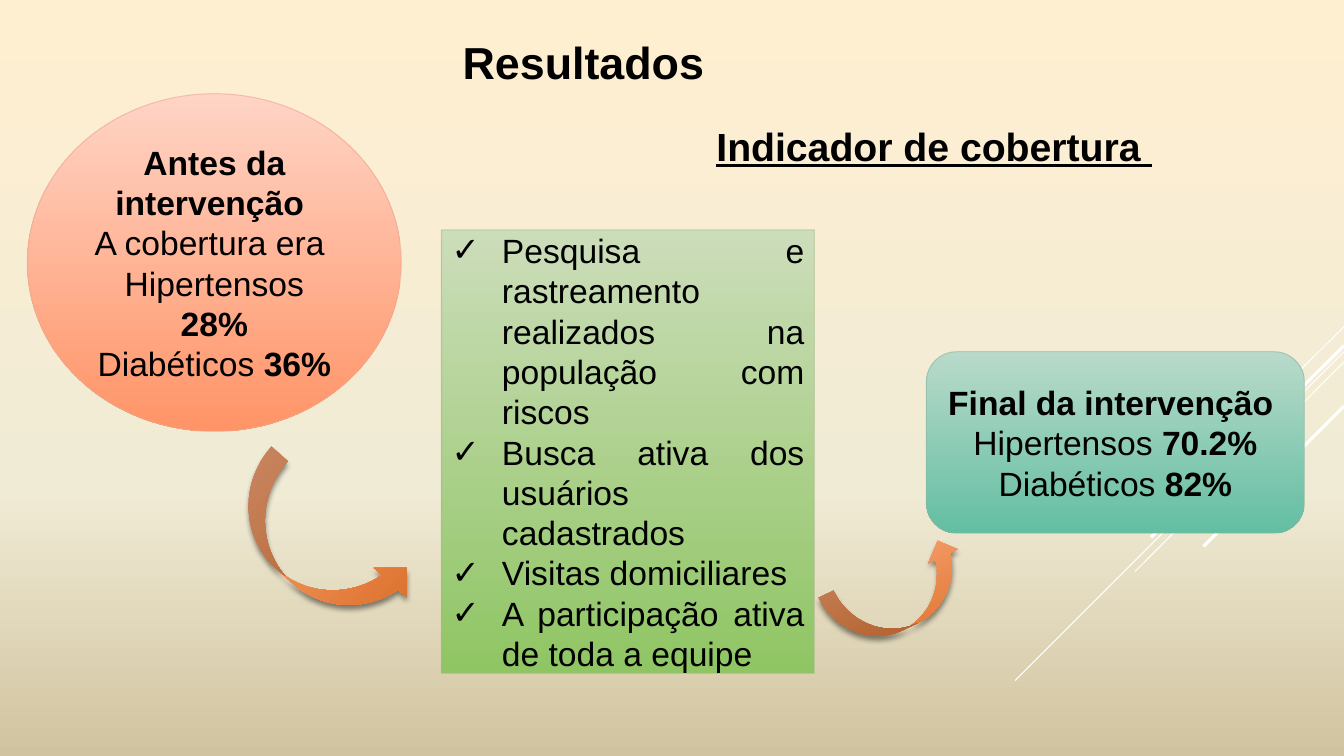
from copy import deepcopy

from lxml import etree
from pptx import Presentation
from pptx import util as u
from pptx.dml import color
from pptx.enum import shapes, text
from pptx.oxml import ns

KIND = shapes.MSO_SHAPE
ALIGN = text.PP_ALIGN


def tint(value):
    return color.RGBColor.from_string(value)


def node(base, tag, **attrs):
    return etree.SubElement(base, ns.qn(tag), attrs)


class Deck:
    font = "Arial"
    ink = "000000"

    def __init__(self):
        self.prs = Presentation()
        self.prs.slide_width = u.Inches(13.33)
        self.prs.slide_height = u.Inches(7.5)
        self.slide = self.prs.slides.add_slide(self.prs.slide_layouts[1])

    def box(self, x, y, w, h):
        wide, high = self.prs.slide_width, self.prs.slide_height
        return [round(part * full / 100) for part, full in
                ((x, wide), (y, high), (w, wide), (h, high))]

    def place(self, item, area):
        item.left, item.top, item.width, item.height = self.box(*area)

    def grade(self, fill, base, stops):
        fill.gradient()
        fill.gradient_angle = 270
        marks = base.find(".//" + ns.qn("a:gsLst"))
        while len(marks) < len(stops):
            marks.append(deepcopy(marks[-1]))
        for stop, (spot, tone) in zip(fill.gradient_stops, stops):
            stop.position = spot
            stop.color.rgb = tint(tone)

    def back(self, *stops):
        self.grade(self.slide.background.fill, self.slide.element, stops)

    def paint(self, item, top, low, edge=None):
        self.grade(item.fill, item.element.spPr, [(0, top), (1, low)])
        if edge is None:
            item.line.fill.background()
            return
        item.line.color.rgb = tint(edge)
        item.line.width = u.Pt(0.75)
        line = item.element.spPr.find(ns.qn("a:ln"))
        node(line.find(".//" + ns.qn("a:srgbClr")), "a:alpha", val="60000")

    def words(self, item, rows, size, align, anchor=text.MSO_ANCHOR.MIDDLE):
        frame = item.text_frame
        frame.word_wrap = True
        frame.auto_size = text.MSO_AUTO_SIZE.NONE
        frame.vertical_anchor = anchor
        for i, row in enumerate(rows):
            para = frame.add_paragraph() if i else frame.paragraphs[0]
            para.alignment = align
            para.line_spacing = 1
            para.space_before = para.space_after = u.Pt(0)
            para.font.name = self.font
            para.font.size = u.Pt(size)
            para.font.color.rgb = tint(self.ink)
            same = len({bold for _, bold in row}) == 1
            if same:
                para.font.bold = row[0][1]
            for part, bold in row:
                run = para.add_run()
                run.text = part
                if not same:
                    run.font.bold = bold
        return frame.paragraphs

    def title(self, line, area):
        item = self.slide.shapes.title
        self.place(item, area)
        for para in self.words(item, [[(line, True)]], 28, ALIGN.CENTER):
            para.font.underline = True

    def label(self, line, area):
        item = self.slide.shapes.add_textbox(*self.box(*area))
        self.words(item, [[(line, True)]], 32, ALIGN.LEFT,
                   text.MSO_ANCHOR.TOP)

    def checks(self, lines, area, *tones):
        item = self.slide.placeholders[1]
        self.place(item, area)
        self.paint(item, *tones)
        rows = [[(line, False)] for line in lines]
        for para in self.words(item, rows, 24, ALIGN.JUSTIFY):
            props = para._p.get_or_add_pPr()
            props.set("marL", str(u.Inches(0.5)))
            props.set("indent", str(-u.Inches(0.5)))
            last = props.find(ns.qn("a:defRPr"))
            last.addprevious(node(props, "a:buFont", typeface=self.font))
            last.addprevious(node(props, "a:buChar", char="✓"))

    def shape(self, kind, area, *tones):
        item = self.slide.shapes.add_shape(kind, *self.box(*area))
        item.shadow.inherit = False
        self.paint(item, *tones)
        return item

    def card(self, kind, rows, area, *tones):
        self.words(self.shape(kind, area, *tones), rows, 24, ALIGN.CENTER)

    def arrow(self, kind, area, turn):
        item = self.shape(kind, area, "FFAE82", "D7681F")
        item.rotation = turn
        fx = item.element.spPr.find(ns.qn("a:effectLst"))
        cast = node(fx, "a:outerShdw", blurRad=str(u.Pt(4)),
                    dist=str(u.Pt(3)), dir="5400000", rotWithShape="0")
        shade = node(cast, "a:srgbClr", val=self.ink)
        node(shade, "a:alpha", val="46000")

    def ray(self, start, x, y, width):
        ends = self.box(100, start, x, y)
        item = self.slide.shapes.add_connector(
            shapes.MSO_CONNECTOR.STRAIGHT, *ends)
        item.line.color.rgb = tint("FFFFFF")
        item.line.width = u.Pt(width)
        node(item.element.spPr, "a:effectLst")


def main():
    deck = Deck()
    deck.back((0, "FFEFD1"), (0.65, "F0EBD5"), (1, "D1C39F"))
    for ray in ((43.2, 92.48, 56.53, 0.75), (46.53, 75.53, 90, 0.75),
                (47.87, 84.45, 75.6, 0.75), (45.73, 85.65, 71.07, 2.25),
                (53.73, 89.55, 72.27, 2.25)):
        deck.ray(*ray)
    deck.title("Indicador de cobertura ", (41.63, 14.93, 55.73, 8.67))
    deck.card(KIND.OVAL, [
        [("Antes da intervenção ", True)],
        [("A cobertura era ", False)],
        [("Hipertensos ", False), ("28%", True)],
        [("Diabéticos ", False), ("36%", True)],
    ], (2.03, 12.4, 27.83, 44.67), "FFD4C6", "FF9467", "EEA78F")
    deck.checks([
        "Pesquisa e rastreamento realizados na população com riscos ",
        "Busca ativa dos usuários cadastrados",
        "Visitas domiciliares ",
        "A participação ativa de toda a equipe",
    ], (32.85, 30.4, 27.75, 58.67), "CCDDBA", "8FC563", "A4BB8B")
    deck.card(KIND.ROUNDED_RECTANGLE, [
        [("Final da intervenção ", True)],
        [("Hipertensos ", False), ("70.2%", True)],
        [("Diabéticos ", False), ("82%", True)],
    ], (68.93, 46.53, 28.13, 24), "B9DACA", "63BEA2", "8AB7A1")
    deck.label("Resultados", (33.68, 3.87, 32.03, 8.53))
    deck.arrow(KIND.CURVED_RIGHT_ARROW, (20.4, 58.93, 6.53, 26.93), 311.9)
    deck.arrow(KIND.CURVED_UP_ARROW, (61.43, 74.4, 11.03, 8.67), 334.4)
    deck.prs.save("out.pptx")


if __name__ == "__main__":
    main()
